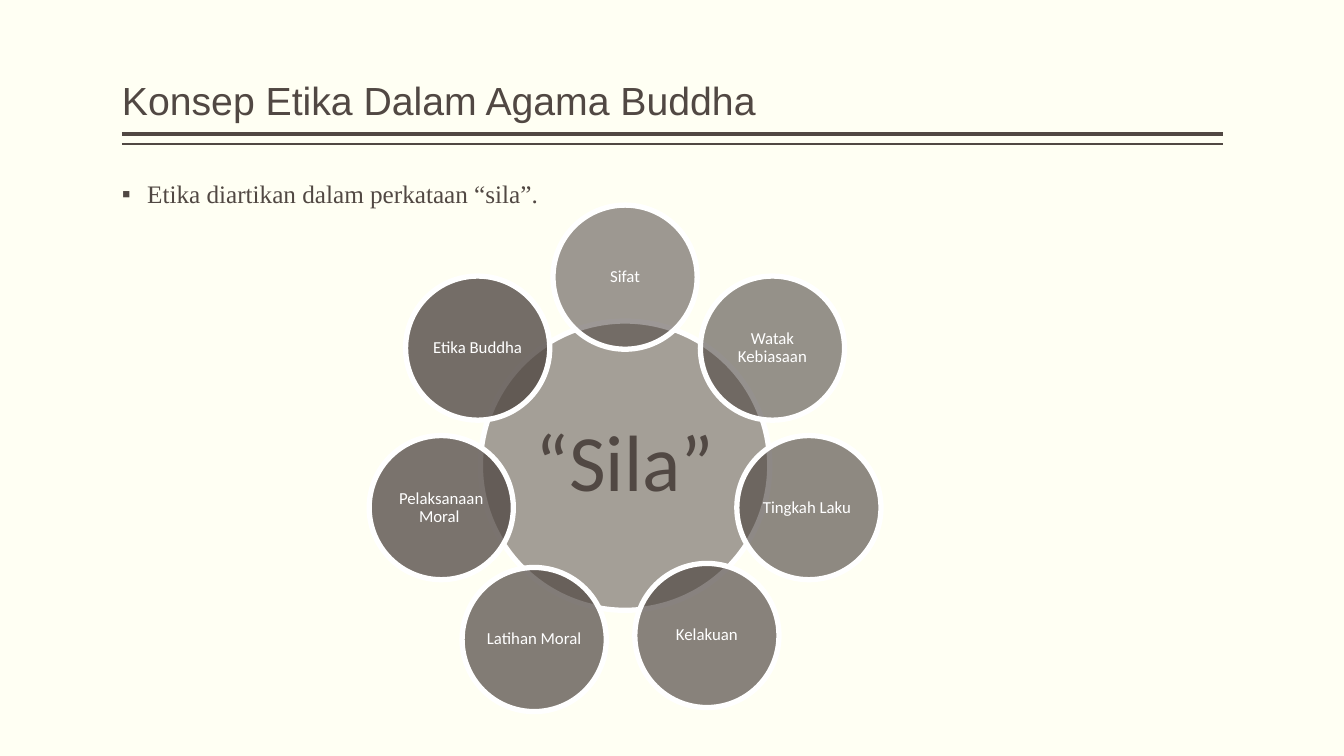
from dataclasses import dataclass
from math import cos, radians, sin

from lxml.etree import SubElement
from pptx import Presentation
from pptx.dml.color import RGBColor
from pptx.enum.shapes import MSO_CONNECTOR, MSO_SHAPE
from pptx.enum.text import MSO_ANCHOR, MSO_AUTO_SIZE, PP_ALIGN
from pptx.oxml.ns import qn
from pptx.util import Inches, Pt

TITLE = "Konsep Etika Dalam Agama Buddha"
STATEMENT = "Etika diartikan dalam perkataan “sila”."
HUB = ("“Sila”", "4A413D", 50)
RING = [
    ("Sifat", "4B423E", 54, (0, 0)),
    ("Watak Kebiasaan", "4C443F", 59, (0, 0)),
    ("Tingkah Laku ", "4D4540", 63, (0, 0)),
    ("Kelakuan", "4E4641", 67, (0, 0)),
    ("Latihan Moral", "504742", 71, (-0.09, 0.04)),
    ("Pelaksanaan Moral ", "514843", 76, (0, 0)),
    ("Etika Buddha", "524944", 80, (0, 0)),
]
RULES = [(1.33, 3), (1.43, 1)]


@dataclass(frozen=True)
class Theme:
    background: str = "FFFFF3"
    ink: str = "514843"
    white: str = "FFFFFF"
    title_font: str = "Arial"
    body_font: str = "Times New Roman"
    diagram_font: str = "Calibri"
    title_size: int = 28
    body_size: int = 18
    hub_size: int = 57
    ring_size: int = 12
    outline: float = 3.78


THEME = Theme()
LEFT, WIDTH = 1.21, 10.92
CENTER_X, CENTER_Y = 6.2, 4.62
HUB_DIAMETER, RING_DIAMETER, RING_RADIUS = 2.87, 1.43, 1.87


def write_text(shape, text, *, font, size, color=THEME.ink, align=PP_ALIGN.LEFT,
               anchor=MSO_ANCHOR.TOP, insets=(0, 0.05), space_before=0):
    frame = shape.text_frame
    frame.word_wrap = True
    frame.auto_size = MSO_AUTO_SIZE.NONE
    frame.vertical_anchor = anchor
    frame.margin_left = frame.margin_right = Inches(insets[0])
    frame.margin_top = frame.margin_bottom = Inches(insets[1])
    paragraph = frame.paragraphs[0]
    paragraph.alignment = align
    paragraph.line_spacing = 0.9
    paragraph.space_before = Pt(space_before)
    run = paragraph.add_run()
    run.text = text
    run.font.name = font
    run.font.size = Pt(size)
    run.font.color.rgb = RGBColor.from_string(color)
    return paragraph


def place(shape, left, top, width, height):
    shape.left, shape.top = Inches(left), Inches(top)
    shape.width, shape.height = Inches(width), Inches(height)


def add_bullet(paragraph):
    properties = paragraph._p.get_or_add_pPr()
    properties.set("marL", str(Inches(0.25)))
    properties.set("indent", str(-Inches(0.25)))
    SubElement(properties, qn("a:buFont"), typeface="Arial")
    SubElement(properties, qn("a:buChar"), char="▪")


def add_rule(slide, top, weight):
    rule = slide.shapes.add_connector(
        MSO_CONNECTOR.STRAIGHT, Inches(LEFT), Inches(top), Inches(LEFT + WIDTH), Inches(top))
    rule.line.color.rgb = RGBColor.from_string(THEME.ink)
    rule.line.width = Pt(weight)
    SubElement(rule._element.spPr, qn("a:effectLst"))


def add_circle(slide, text, center_x, center_y, diameter, fill, opacity, **text_format):
    circle = slide.shapes.add_shape(
        MSO_SHAPE.OVAL, Inches(center_x - diameter / 2), Inches(center_y - diameter / 2),
        Inches(diameter), Inches(diameter))
    circle.shadow.inherit = False
    circle.fill.solid()
    circle.fill.fore_color.rgb = RGBColor.from_string(fill)
    color = circle._element.spPr.find(qn("a:solidFill")).find(qn("a:srgbClr"))
    SubElement(color, qn("a:alpha"), val=str(opacity * 1000))
    circle.line.color.rgb = RGBColor.from_string(THEME.white)
    circle.line.width = Pt(THEME.outline)
    write_text(circle, text, font=THEME.diagram_font, align=PP_ALIGN.CENTER,
               anchor=MSO_ANCHOR.MIDDLE, **text_format)


def main():
    presentation = Presentation()
    presentation.slide_width, presentation.slide_height = Inches(13.33), Inches(7.5)
    slide = presentation.slides.add_slide(presentation.slide_layouts[1])
    slide.background.fill.solid()
    slide.background.fill.fore_color.rgb = RGBColor.from_string(THEME.background)

    title, body = slide.shapes.title, slide.placeholders[1]
    place(title, LEFT, 0.08, WIDTH, 1.2)
    write_text(title, TITLE, font=THEME.title_font, size=THEME.title_size,
               anchor=MSO_ANCHOR.BOTTOM)
    place(body, LEFT, 1.75, WIDTH, 5)
    add_bullet(write_text(body, STATEMENT, font=THEME.body_font, size=THEME.body_size,
                          space_before=18))

    for top, weight in RULES:
        add_rule(slide, top, weight)

    hub_text, hub_fill, hub_opacity = HUB
    add_circle(slide, hub_text, CENTER_X, CENTER_Y, HUB_DIAMETER, hub_fill, hub_opacity,
               size=THEME.hub_size, insets=(0.08, 0.08))
    for index, (text, fill, opacity, (shift_x, shift_y)) in enumerate(RING):
        angle = radians(360 * index / len(RING))
        add_circle(slide, text, CENTER_X + RING_RADIUS * sin(angle) + shift_x,
                   CENTER_Y - RING_RADIUS * cos(angle) + shift_y, RING_DIAMETER, fill, opacity,
                   size=THEME.ring_size, color=THEME.white, insets=(0.02, 0.02))

    presentation.save("out.pptx")


if __name__ == "__main__":
    main()
